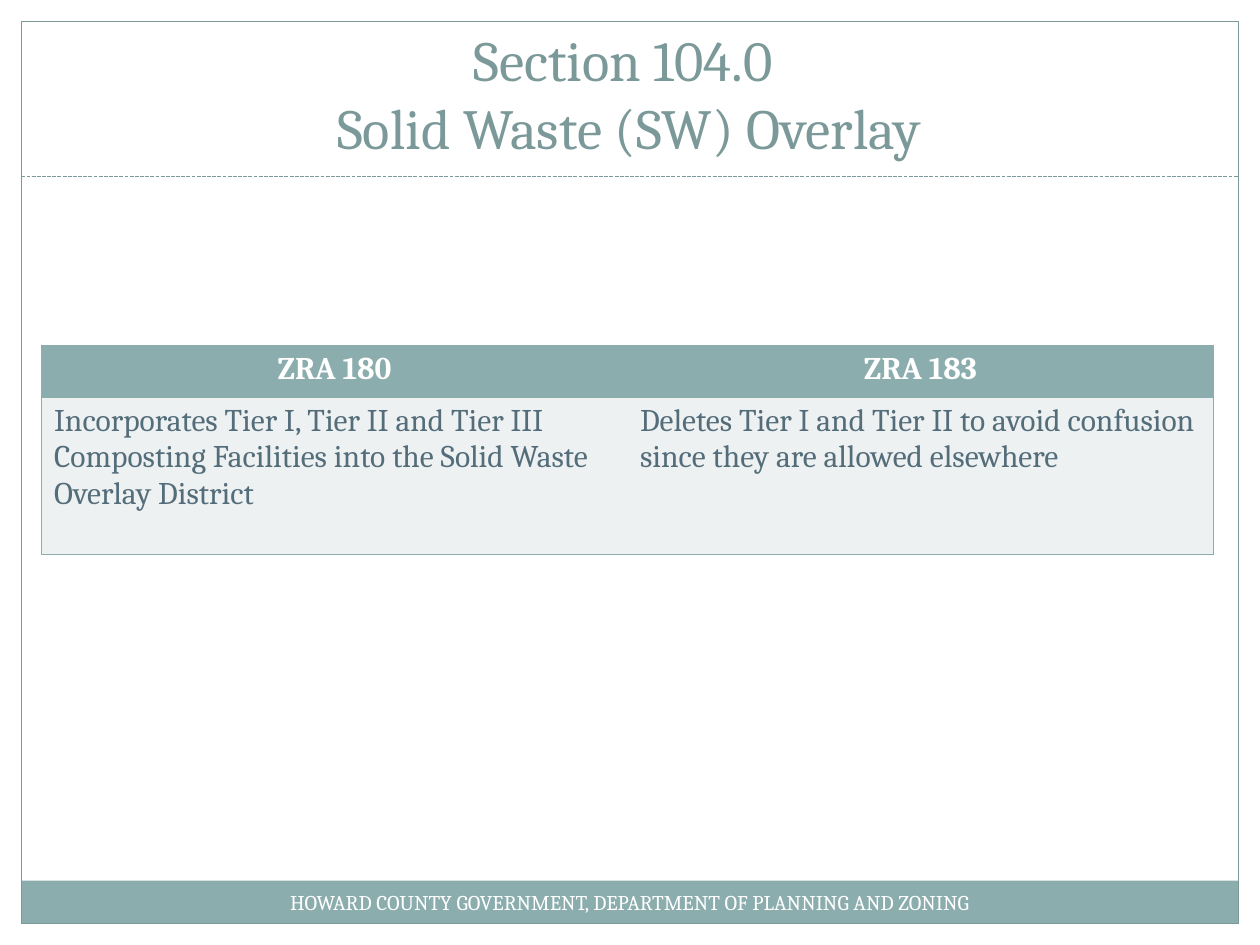
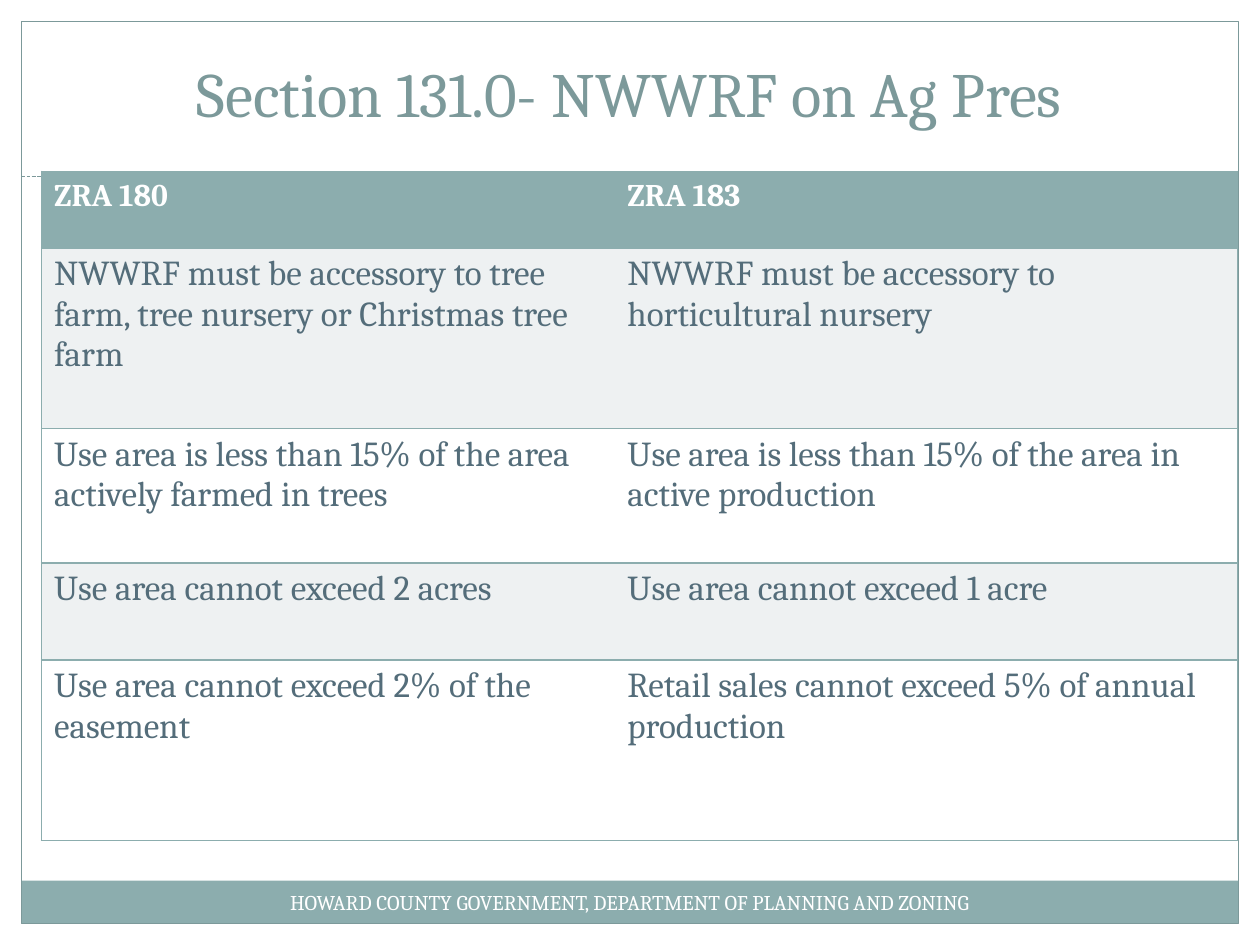
"""Build two zoning comparison slides with a shared frame, title style and footer."""
from lxml import etree
from pptx import Presentation
from pptx.dml.color import RGBColor
from pptx.enum.dml import MSO_LINE
from pptx.enum.shapes import MSO_CONNECTOR, MSO_SHAPE
from pptx.enum.text import MSO_ANCHOR, MSO_AUTO_SIZE, PP_ALIGN
from pptx.oxml.ns import qn
from pptx.util import Pt

EMU_PER_PX = 9144
FONT = "Cambria"
TEAL = RGBColor(0x8C, 0xAD, 0xAE)
DARK_TEAL = RGBColor(0x7C, 0x99, 0x9A)
SLATE = RGBColor(0x54, 0x6D, 0x7A)
PALE = RGBColor(0xEE, 0xF1, 0xF2)
WHITE = RGBColor(0xFF, 0xFF, 0xFF)

RECTANGLE = MSO_SHAPE.RECTANGLE
STRAIGHT = MSO_CONNECTOR.STRAIGHT
DASH = MSO_LINE.SQUARE_DOT
LEFT, CENTER = PP_ALIGN.LEFT, PP_ALIGN.CENTER
MIDDLE, BOTTOM = MSO_ANCHOR.MIDDLE, MSO_ANCHOR.BOTTOM
NO_AUTOFIT = MSO_AUTO_SIZE.NONE

FOOTER = "HOWARD COUNTY GOVERNMENT, DEPARTMENT OF PLANNING AND ZONING"
HEADERS = ("ZRA 180", "ZRA 183")


def px(*lengths):
    """Turn px lengths into a list of EMU."""
    return [length * EMU_PER_PX for length in lengths]


class Deck:
    """Hold the presentation, its style and the current slide."""

    def __init__(self):
        self.presentation = Presentation()
        self.presentation.slide_width, self.presentation.slide_height = px(1000, 750)
        self.slide = None

    def add_slide(self, title_lines, title_top, title_size):
        """Start a slide with its title, footer, frame and dashed rule."""
        layout = self.presentation.slide_layouts[5]
        self.slide = self.presentation.slides.add_slide(layout)
        self.title(title_lines, title_top, title_size)
        self.footer()
        self.frame()
        self.rule()

    def add_text(self, paragraph, lines, size, color, align, bold=False):
        """Add lines as runs of one paragraph."""
        paragraph.alignment = align
        for index, line in enumerate(lines):
            if index:
                paragraph.add_line_break()
            run = paragraph.add_run()
            run.text = line
            run.font.name = FONT
            run.font.size = Pt(size)
            run.font.bold = bold
            run.font.color.rgb = color

    def title(self, lines, top, size):
        """Place and fill the title placeholder."""
        title = self.slide.shapes.title
        title.left, title.top, title.width, title.height = px(33, top, 933, 83)
        frame = title.text_frame
        frame.auto_size = NO_AUTOFIT
        frame.word_wrap = True
        frame.vertical_anchor = BOTTOM
        self.add_text(frame.paragraphs[0], lines, size, DARK_TEAL, CENTER)

    def rectangle(self, left, top, width, height):
        """Add a rectangle without shadow."""
        shape = self.slide.shapes.add_shape(RECTANGLE, *px(left, top, width, height))
        shape.shadow.inherit = False
        return shape

    def footer(self):
        """Add the footer band with its text."""
        band = self.rectangle(17, 699, 966, 34)
        band.fill.solid()
        band.fill.fore_color.rgb = TEAL
        band.line.fill.background()
        band.text_frame.word_wrap = True
        band.text_frame.vertical_anchor = MIDDLE
        self.add_text(band.text_frame.paragraphs[0], [FOOTER], 12, WHITE, CENTER)

    def frame(self):
        """Add the thin frame around the slide."""
        border = self.rectangle(17, 17, 966, 716)
        border.fill.background()
        border.line.color.rgb = DARK_TEAL
        border.line.width = Pt(0.75)

    def rule(self):
        """Add the dashed rule under the title."""
        line = self.slide.shapes.add_connector(STRAIGHT, *px(17, 140, 983, 140))
        line.line.color.rgb = DARK_TEAL
        line.line.width = Pt(0.75)
        line.line.dash_style = DASH
        properties = line.element.find(qn("p:spPr"))
        etree.SubElement(properties, qn("a:effectLst"))

    def cell_borders(self, cell, sides):
        """Draw the named sides of a cell and clear the others."""
        properties = cell._tc.get_or_add_tcPr()
        for side in "LRTB":
            line = etree.SubElement(properties, qn(f"a:ln{side}"), w=str(Pt(1)))
            if side in sides:
                fill = etree.SubElement(line, qn("a:solidFill"))
                etree.SubElement(fill, qn("a:srgbClr"), val=str(TEAL))
            else:
                etree.SubElement(line, qn("a:noFill"))

    def table(self, top, widths, heights, body, body_size, header_align=LEFT):
        """Add a two-column comparison table with banded rows."""
        rows = [HEADERS, *body]
        table = self.slide.shapes.add_table(
            len(rows), len(widths), *px(33, top, sum(widths), sum(heights))
        ).table
        for column, width in zip(table.columns, px(*widths)):
            column.width = width
        for row, height in zip(table.rows, px(*heights)):
            row.height = height
        for row_index, texts in enumerate(rows):
            is_header = row_index == 0
            band = TEAL if is_header else PALE if row_index % 2 else WHITE
            for column_index, text in enumerate(texts):
                cell = table.cell(row_index, column_index)
                self.cell_borders(cell, "RTB" if column_index else "LTB")
                cell.fill.solid()
                cell.fill.fore_color.rgb = band
                self.add_text(
                    cell.text_frame.paragraphs[0],
                    [text],
                    18 if is_header else body_size,
                    WHITE if is_header else SLATE,
                    header_align if is_header else LEFT,
                    is_header,
                )


def main():
    """Build both slides and save them."""
    deck = Deck()

    deck.add_slide(["Section 104.0 ", "Solid Waste (SW) Overlay"], 50, 32.4)
    overlay_rows = [
        (
            "Incorporates Tier I, Tier II and Tier III Composting Facilities "
            "into the Solid Waste Overlay District",
            "Deletes Tier I and Tier II to avoid confusion since they are allowed elsewhere",
        ),
    ]
    deck.table(274, (465, 465), (41, 125), overlay_rows, 18, CENTER)

    deck.add_slide(["Section 131.0- NWWRF on Ag Pres"], 25, 36)
    preservation_rows = [
        (
            "NWWRF must be accessory to tree farm, tree nursery or Christmas tree farm",
            "NWWRF must be accessory to horticultural nursery",
        ),
        (
            "Use area is less than 15% of the area actively farmed in trees",
            "Use area is less than 15% of the area in active production",
        ),
        ("Use area cannot exceed 2 acres", "Use area cannot exceed 1 acre"),
        (
            "Use area cannot exceed 2% of the easement",
            "Retail sales cannot exceed 5% of annual production",
        ),
    ]
    deck.table(136, (455, 494), (61, 143, 107, 77, 143), preservation_rows, 20)

    deck.presentation.save("out.pptx")


if __name__ == "__main__":
    main()
